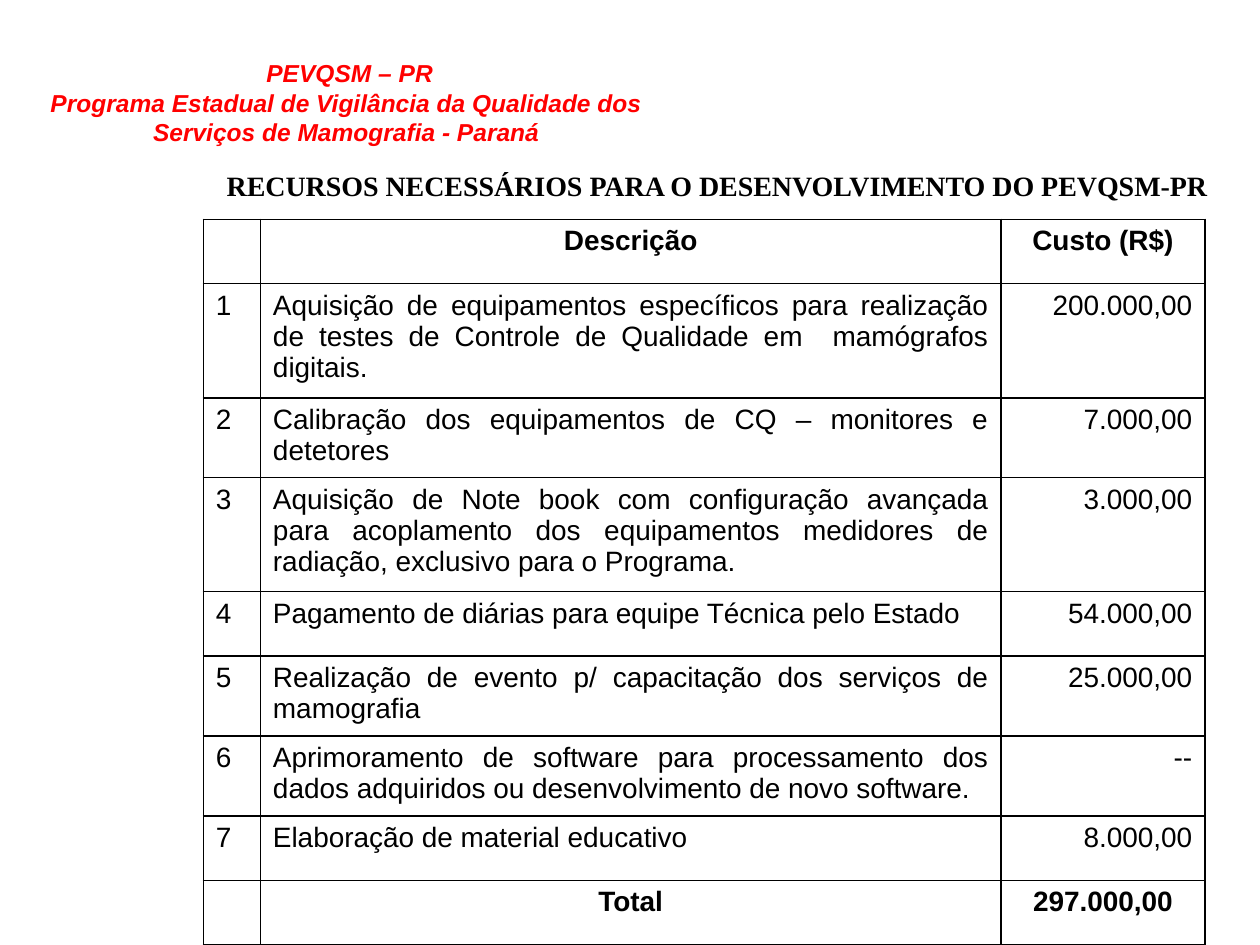
"""Build the slide listing the resources and costs of the PEVQSM-PR programme."""
from lxml.etree import SubElement as Sub
from pptx import Presentation
from pptx.dml.color import RGBColor
from pptx.enum.text import MSO_ANCHOR as Anchor, PP_ALIGN as Align
from pptx.oxml.ns import qn
from pptx.util import Cm, Pt

RED = RGBColor(0xFF, 0x00, 0x00)
BLACK = RGBColor(0x00, 0x00, 0x00)

HEAD = [
    "PEVQSM – PR",
    "Programa Estadual de Vigilância da Qualidade dos ",
    "Serviços de Mamografia - Paraná ",
]
TITLE = "RECURSOS NECESSÁRIOS PARA O DESENVOLVIMENTO DO PEVQSM-PR"
ITEMS = [
    ("Aquisição de equipamentos específicos para realização de testes de "
     "Controle de Qualidade em  mamógrafos digitais.", "200.000,00"),
    ("Calibração dos equipamentos de CQ – monitores e detetores", "7.000,00"),
    ("Aquisição de Note book com configuração avançada para acoplamento dos "
     "equipamentos medidores de radiação, exclusivo para o Programa.", "3.000,00"),
    ("Pagamento de diárias para equipe Técnica pelo Estado", "54.000,00"),
    ("Realização de evento p/ capacitação dos serviços de mamografia", "25.000,00"),
    ("Aprimoramento de software para processamento dos dados adquiridos ou "
     "desenvolvimento de novo software.", "--"),
    ("Elaboração de material educativo ", "8.000,00"),
]
COLS = [1.15, 14.93, 4.11]
ROWS = [1.3, 2.3, 1.6, 2.3, 1.3, 1.6, 1.6, 1.3, 1.3]


def add_run(para, text, size, face="Arial", color=BLACK, bold=False, slant=False):
    """Append one styled run to a paragraph."""
    run = para.add_run()
    run.text = text
    font = run.font
    font.size, font.name = Pt(size), face
    font.bold, font.italic = bold, slant
    font.color.rgb = color


def add_box(slide, left, top, width, height, anchor):
    """Add a wrapping text box and return its frame."""
    box = slide.shapes.add_textbox(Cm(left), Cm(top), Cm(width), Cm(height))
    frame = box.text_frame
    frame.word_wrap = True
    frame.vertical_anchor = anchor
    return frame


def add_head(slide):
    """Add the red programme name."""
    frame = add_box(slide, 0, 0.91, 14.1, 2.31, Anchor.MIDDLE)
    para = frame.paragraphs[0]
    para.alignment = Align.CENTER
    for num, line in enumerate(HEAD):
        if num:
            para.add_line_break()
        add_run(para, line, 14, color=RED, bold=True, slant=True)


def add_title(slide):
    """Add the title above the table."""
    frame = add_box(slide, 3.3, 2.92, 21.46, 1.88, Anchor.TOP)
    frame.margin_left, frame.margin_top = Cm(1.27), Cm(0.48)
    add_run(frame.paragraphs[0], TITLE, 16, face="Times New Roman", bold=True)


def set_edges(cell):
    """Draw a thin black line on each side of a cell."""
    props = cell._tc.get_or_add_tcPr()
    for side in ("lnL", "lnR", "lnT", "lnB"):
        line = Sub(props, qn(f"a:{side}"), w=str(Pt(1)))
        fill = Sub(line, qn("a:solidFill"))
        Sub(fill, qn("a:srgbClr"), val=str(BLACK))


def add_grid(slide, data):
    """Add the cost table, with bold centred first and last rows."""
    shape = slide.shapes.add_table(len(ROWS), len(COLS), Cm(4.1), Cm(4.42),
                                   Cm(sum(COLS)), Cm(sum(ROWS)))
    table = shape.table
    table.first_row = table.horz_banding = False
    for col, width in zip(table.columns, COLS):
        col.width = Cm(width)
    for row, height in zip(table.rows, ROWS):
        row.height = Cm(height)
    sides = (Align.LEFT, Align.JUSTIFY, Align.RIGHT)
    for y, texts in enumerate(data):
        bold = y in (0, len(data) - 1)
        for x, text in enumerate(texts):
            cell = table.cell(y, x)
            set_edges(cell)
            cell.fill.background()
            if text:
                para = cell.text_frame.paragraphs[0]
                para.alignment = Align.CENTER if bold else sides[x]
                add_run(para, text, 16, bold=bold)


def main():
    """Build and save the slide."""
    deck = Presentation()
    deck.slide_width, deck.slide_height = Cm(25.4), Cm(19.05)
    slide = deck.slides.add_slide(deck.slide_layouts[6])
    items = [(str(num), *item) for num, item in enumerate(ITEMS, 1)]
    add_head(slide)
    add_grid(slide, [("", "Descrição", "Custo (R$)"), *items,
                     ("", "Total", "297.000,00")])
    add_title(slide)
    deck.save("out.pptx")


if __name__ == "__main__":
    main()
